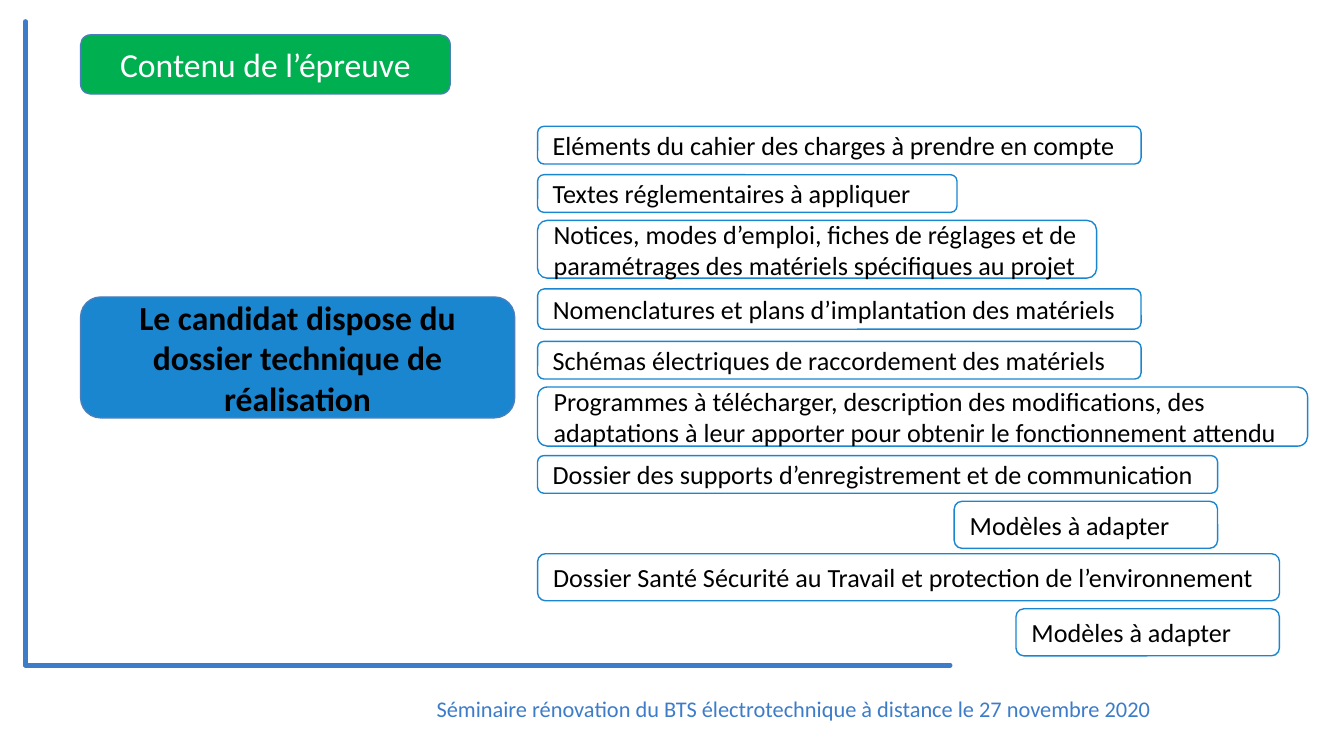
"""Build the slide on the content of the exam."""
from lxml import etree
from pptx import Presentation
from pptx.dml.color import RGBColor
from pptx.enum.shapes import MSO_CONNECTOR, MSO_SHAPE
from pptx.enum.text import MSO_ANCHOR, MSO_AUTO_SIZE, PP_ALIGN
from pptx.oxml.ns import qn
from pptx.util import Inches, Pt

LEFT, CENTER = PP_ALIGN.LEFT, PP_ALIGN.CENTER
TOP, MIDDLE = MSO_ANCHOR.TOP, MSO_ANCHOR.MIDDLE
ROUND, STRAIGHT = MSO_SHAPE.ROUNDED_RECTANGLE, MSO_CONNECTOR.STRAIGHT
NO_FIT, GROW = MSO_AUTO_SIZE.NONE, MSO_AUTO_SIZE.SHAPE_TO_FIT_TEXT
BLACK = RGBColor(0, 0, 0)
WHITE = RGBColor(255, 255, 255)
GREEN = RGBColor(0, 176, 80)
BLUE = RGBColor(0x1A, 0x86, 0xD0)
EDGE = RGBColor(0x4B, 0x7E, 0xBC)
FRAME = RGBColor(0x3D, 0x7C, 0xC9)

WIDE = 10
HIGH = WIDE * 9 / 16
MARGIN, COLUMN = 0.6, 4
CORNER = (0.19, 4.95)
ENDS = [(7.07, 4.95), (0.19, 0.16)]
TITLE = "Contenu de l’épreuve"
TOPIC = "Le candidat dispose du dossier technique de réalisation"
FOOTER = "Séminaire rénovation du BTS électrotechnique à distance le 27 novembre 2020"
MODEL = ("Modèles à adapter", 1.96, 0.35)

ITEMS = [
    ("Eléments du cahier des charges à prendre en compte", 4.49, 0.28, 0.94, None),
    ("Textes réglementaires à appliquer", 3.12, 0.28, 1.3, None),
    ("Notices, modes d’emploi, fiches de réglages et de paramétrages "
     "des matériels spécifiques au projet", 4.16, 0.43, 1.64, None),
    ("Nomenclatures et plans d’implantation des matériels", 4.49, 0.3, 2.15, None),
    ("Schémas électriques de raccordement des matériels", 4.49, 0.28, 2.54, None),
    ("Programmes à télécharger, description des modifications, des adaptations "
     "à leur apporter pour obtenir le fonctionnement attendu", 5.73, 0.44, 2.88, None),
    ("Dossier des supports d’enregistrement et de communication", 5.06, 0.28, 3.39, 3.73),
    ("Dossier Santé Sécurité au Travail et protection de l’environnement",
     5.52, 0.35, 4.12, 4.53),
]


def write(shape, text, size=14, color=BLACK, bold=False, align=LEFT,
          anchor=MIDDLE, fit=NO_FIT):
    frame = shape.text_frame
    frame.auto_size = fit
    frame.word_wrap = True
    frame.vertical_anchor = anchor
    para = frame.paragraphs[0]
    para.alignment = align
    run = para.add_run()
    run.text = text
    font = run.font
    font.name, font.size, font.bold = "Calibri", Pt(size), bold
    font.color.rgb = color


def add_box(slide, place, text, fill=WHITE, line=BLUE, **style):
    box = slide.shapes.add_shape(ROUND, *map(Inches, place))
    box.shadow.inherit = False
    box.fill.solid()
    box.fill.fore_color.rgb = fill
    box.line.color.rgb = line
    box.line.width = Pt(0.75)
    write(box, text, **style)


def add_line(slide, start, end):
    line = slide.shapes.add_connector(STRAIGHT, *map(Inches, start + end))
    line.line.color.rgb = FRAME
    line.line.width = Pt(2.5)
    props = line._element.spPr
    props.find(qn("a:ln")).set("cap", "rnd")
    etree.SubElement(props, qn("a:effectLst"))


def main():
    deck = Presentation()
    deck.slide_width, deck.slide_height = Inches(WIDE), Inches(HIGH)
    slide = deck.slides.add_slide(deck.slide_layouts[6])
    for end in ENDS:
        add_line(slide, CORNER, end)
    foot = slide.shapes.add_textbox(*map(Inches, (3.15, 5.12, 5.66, 0.3)))
    write(foot, FOOTER, size=12, color=FRAME, anchor=TOP, fit=GROW)
    add_box(slide, (MARGIN, 2.21, 3.23, 0.9), TOPIC, fill=BLUE, line=EDGE,
            size=18, bold=True, align=CENTER)
    add_box(slide, (MARGIN, 0.26, 2.75, 0.44), TITLE, fill=GREEN, line=EDGE,
            size=18, color=WHITE, align=CENTER)
    label, span, tall = MODEL
    for text, width, height, top, below in ITEMS:
        add_box(slide, (COLUMN, top, width, height), text)
        if below:
            add_box(slide, (COLUMN + width - span, below, span, tall), label)
    deck.save("out.pptx")


if __name__ == "__main__":
    main()
